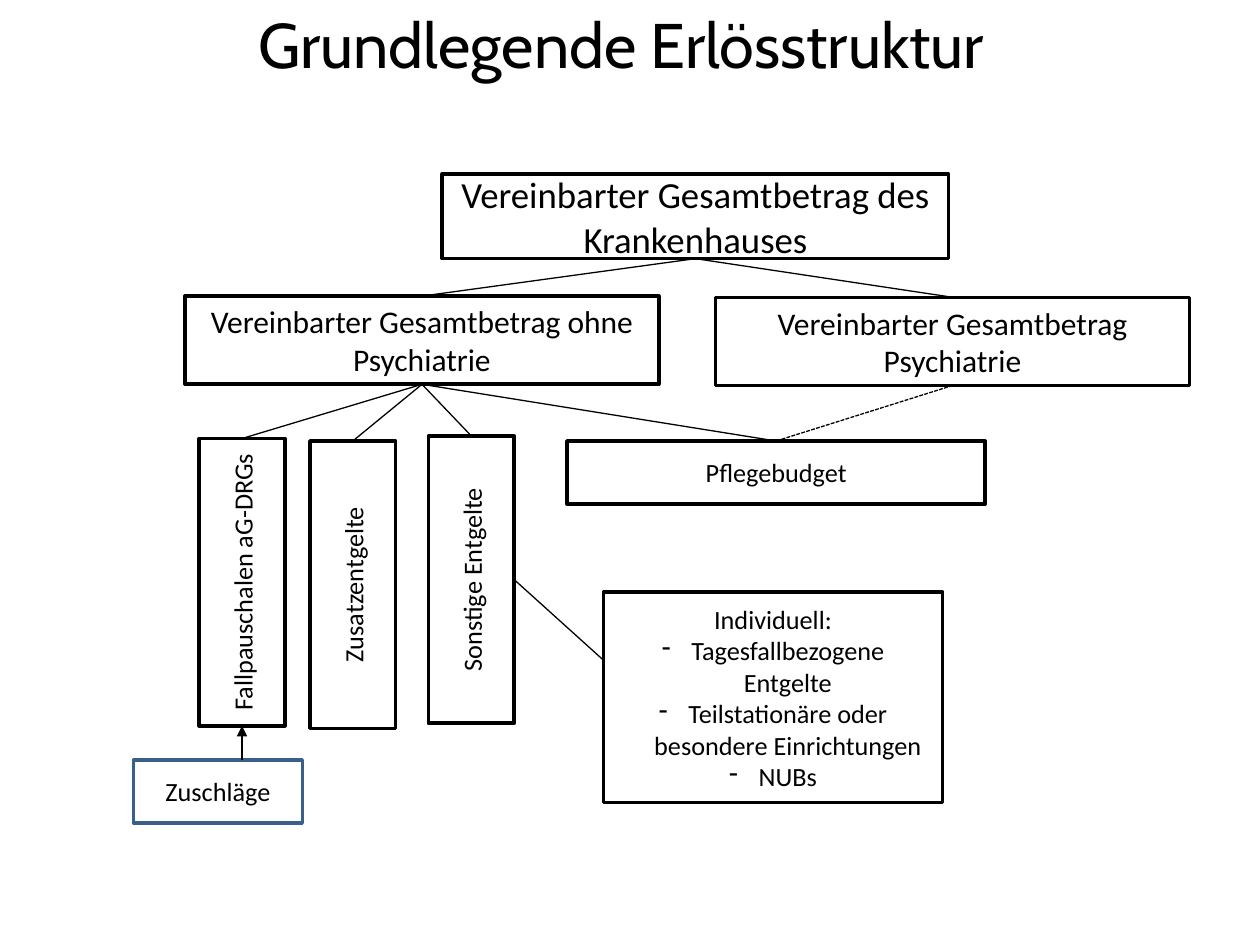
import pptx
import pptx.dml.color
import pptx.enum.dml
import pptx.enum.shapes
import pptx.enum.text
import pptx.util
from lxml import etree
from pptx.oxml.ns import qn

Pt = pptx.util.Pt
COLORS = {"ink": "000000", "paper": "FFFFFF", "blue": "3A5F8C"}
BOTTOM, TOP, RIGHT = 2, 0, 3

TITLE = "Grundlegende Erlösstruktur"
WIDE, COLUMN, SMALL = (270.7, 50.4), (49, 164.2), 36

# name: (left, top, width, height, size, outline, paragraphs)
BOXES = {
    "total": (252.7, 99.4, 289.4, 48.4, 21, "ink",
              ["Vereinbarter Gesamtbetrag des Krankenhauses"]),
    "somatic": (105.8, 169.2, *WIDE, 18, "ink",
                ["Vereinbarter Gesamtbetrag ohne Psychiatrie"]),
    "psychiatry": (409, 169.9, *WIDE, 18, "ink",
                   ["Vereinbarter Gesamtbetrag Psychiatrie"]),
    "nursing": (324, 252, 239, SMALL, 15, "ink", ["Pflegebudget"]),
    "drg": (113.8, 250.6, *COLUMN, 15, "ink", ["Fallpauschalen aG-DRGs"]),
    "extra": (177.1, 252, *COLUMN, 15, "ink", ["Zusatzentgelte"]),
    "other": (244.8, 249.1, *COLUMN, 15, "ink", ["Sonstige Entgelte"]),
    "surcharge": (76.3, 434.2, 96.5, SMALL, 15, "blue", ["Zuschläge"]),
    "individual": (344.9, 338.4, 193.7, 120.2, 15, "ink",
                   ["Individuell:", "Tagesfallbezogene Entgelte",
                    "Teilstationäre oder besondere Einrichtungen", "NUBs"]),
}
BRANCHES = [
    ("total", "somatic"), ("total", "psychiatry"),
    ("somatic", "drg"), ("somatic", "extra"),
    ("somatic", "other"), ("somatic", "nursing"),
    ("psychiatry", "nursing"),
]


def color(name):
    return pptx.dml.color.RGBColor.from_string(COLORS[name])


def write(frame, paragraphs, size, font):
    """Fill a frame with centred paragraphs; those after the first get a dash."""
    frame.word_wrap = True
    frame.vertical_anchor = pptx.enum.text.MSO_ANCHOR.MIDDLE
    frame.text = "\n".join(paragraphs)
    for index, para in enumerate(frame.paragraphs):
        para.alignment = pptx.enum.text.PP_ALIGN.CENTER
        span = para.runs[0]
        span.font.size = Pt(size)
        span.font.name = font
        span.font.color.rgb = color("ink")
        if index:
            props = para._p.get_or_add_pPr()
            props.set("marL", str(Pt(16.9)))
            props.set("indent", str(-Pt(16.9)))
            etree.SubElement(props, qn("a:buChar"), char="-")


def add_box(page, name):
    left, top, width, height, size, outline, paragraphs = BOXES[name]
    box = page.shapes.add_shape(pptx.enum.shapes.MSO_SHAPE.RECTANGLE,
                                Pt(left), Pt(top), Pt(width), Pt(height))
    box.shadow.inherit = False
    box.fill.solid()
    box.fill.fore_color.rgb = color("paper")
    box.line.color.rgb = color(outline)
    box.line.width = Pt(2)
    write(box.text_frame, paragraphs, size, "Calibri")
    if (width, height) == COLUMN:
        box.text_frame._txBody.bodyPr.set("vert", "vert270")
    return box


def add_line(page, target, site, source=None, start=(0, 0)):
    """Join the bottom of source, or a free start point, to a side of target."""
    x, y = (Pt(value) for value in start)
    line = page.shapes.add_connector(
        pptx.enum.shapes.MSO_CONNECTOR.STRAIGHT, x, y, x, y)
    if source is not None:
        line.begin_connect(source, BOTTOM)
    line.end_connect(target, site)
    line.line.color.rgb = color("ink")
    line.line.width = Pt(0.75)
    etree.SubElement(line._element.spPr, qn("a:effectLst"))
    return line


def main():
    deck = pptx.Presentation()
    deck.slide_width, deck.slide_height = Pt(720), Pt(540)
    page = deck.slides.add_slide(deck.slide_layouts[6])

    boxes = {name: add_box(page, name) for name in BOXES}
    for source, target in BRANCHES:
        line = add_line(page, boxes[target], TOP, boxes[source])
        if source == "psychiatry":
            line.line.dash_style = pptx.enum.dml.MSO_LINE.SQUARE_DOT

    drg_middle = BOXES["drg"][0] + COLUMN[0] / 2
    arrow = add_line(page, boxes["drg"], BOTTOM,
                     start=(drg_middle, BOXES["surcharge"][1]))
    etree.SubElement(arrow.line._get_or_add_ln(), qn("a:tailEnd"), type="triangle")
    add_line(page, boxes["other"], RIGHT, start=(BOXES["individual"][0], 377.3))

    title = page.shapes.add_textbox(Pt(31), Pt(0), Pt(648), Pt(49))
    write(title.text_frame, [TITLE], 36, "Cabin")
    deck.save("out.pptx")


if __name__ == "__main__":
    main()
